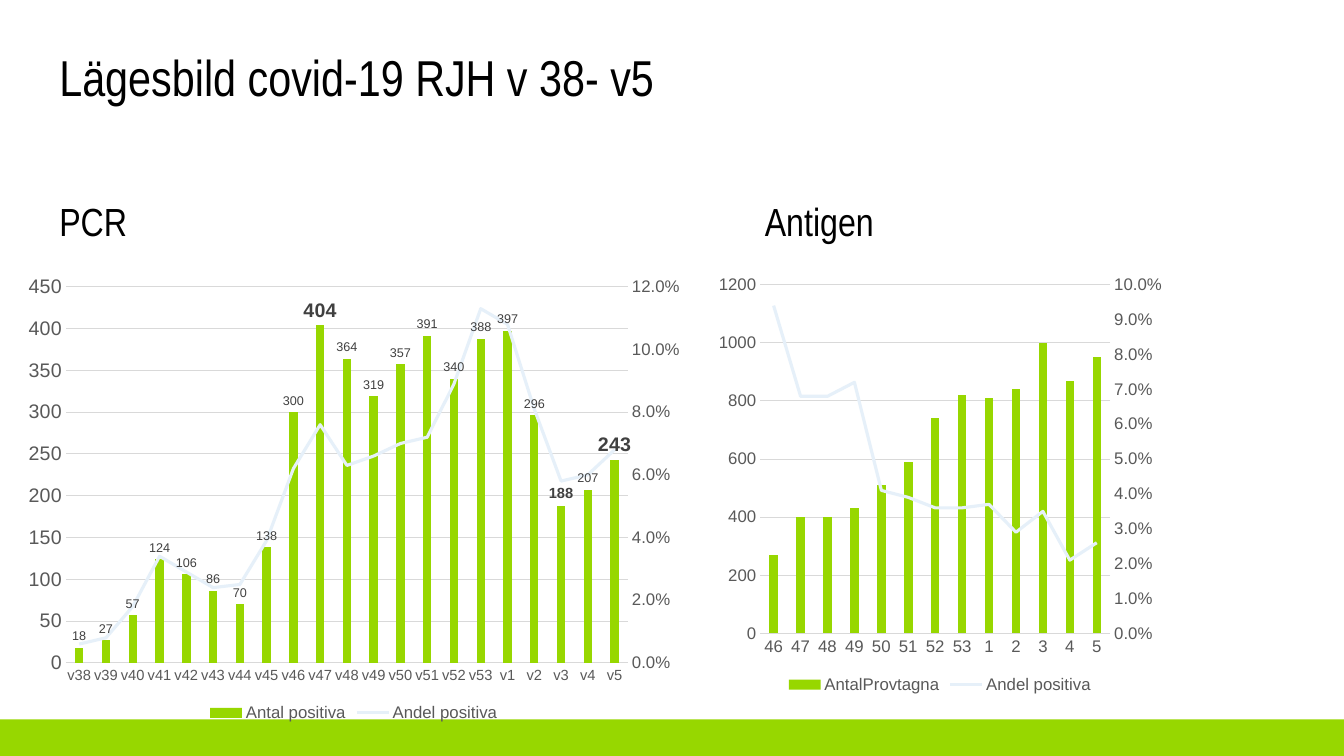
from pptx import Presentation
from pptx.chart.data import CategoryChartData
from pptx.dml.color import RGBColor
from pptx.enum import chart as ch, shapes, text
from pptx.oxml import parse_xml
from pptx.oxml.ns import nsdecls, qn
from pptx.util import Cm, Pt

TITLE = "Lägesbild covid-19 RJH v 38- v5"
PANELS = [
    {
        "head": "PCR", "head_x": 1.24, "box": (0.38, 6.73, 17.07, 11.56),
        "plot": (0.075, 0.043, 0.83, 0.82),
        "weeks": [f"v{n}" for n in [*range(38, 54), *range(1, 6)]],
        "bars": ("Antal positiva",
                 [18, 27, 57, 124, 106, 86, 70, 138, 300, 404, 364,
                  319, 357, 391, 340, 388, 397, 296, 188, 207, 243]),
        "share": [0.006, 0.008, 0.018, 0.034, 0.029, 0.024, 0.025,
                  0.039, 0.062, 0.076, 0.063, 0.066, 0.07, 0.072,
                  0.089, 0.113, 0.108, 0.081, 0.058, 0.06, 0.068],
        "left": (450, 50), "right": (0.12, 0.02),
        "sizes": (10.5, 14), "labels": True,
        "strong": {9: 14, 18: 10.5, 20: 14},
    },
    {
        "head": "Antigen", "head_x": 19.02, "box": (17.88, 6.73, 11.61, 10.85),
        "plot": (0.11, 0.041, 0.76, 0.81),
        "weeks": [str(n) for n in [*range(46, 54), *range(1, 6)]],
        "bars": ("AntalProvtagna",
                 [270, 400, 400, 430, 510, 590, 740, 820, 810, 840,
                  1000, 870, 950]),
        "share": [0.094, 0.068, 0.068, 0.072, 0.041, 0.039, 0.036,
                  0.036, 0.037, 0.029, 0.035, 0.021, 0.026],
        "left": (1200, 200), "right": (0.1, 0.01),
        "sizes": (12, 12), "labels": False, "strong": {},
    },
]
SHARE = "Andel positiva"
THEME = {
    "green": "97D700", "pale": "E6F0F9", "grid": "D9D9D9",
    "axis": "595959", "label": "404040", "black": "000000",
    "font": "Arial", "narrow": "Arial Narrow",
    "title": 36, "head": 28, "text": 12, "value": 9,
}


def rgb(key):
    return RGBColor.from_string(THEME[key])


def style(font, size, key="axis", face="font", bold=False):
    font.name, font.size, font.bold = THEME[face], Pt(size), bold
    font.color.rgb = rgb(key)


def write(holder, words, box, size):
    holder.left, holder.top, holder.width, holder.height = map(Cm, box)
    frame = holder.text_frame
    frame.text = words
    frame.auto_size = text.MSO_AUTO_SIZE.NONE
    frame.vertical_anchor = text.MSO_ANCHOR.TOP
    para = frame.paragraphs[0]
    para.alignment = text.PP_ALIGN.LEFT
    para.line_spacing, para.space_before = 0.9, Pt(0)
    style(para.runs[0].font, size, "black", "narrow")


def split(chart, top, step):
    """Move the second series to a line plot with its own right axis."""
    area = chart.plots[0]._element.getparent()
    bars = chart.plots[0]._element
    line = parse_xml(
        f'<c:lineChart {nsdecls("c")}><c:grouping val="standard"/>'
        '<c:varyColors val="0"/><c:marker val="1"/>'
        '<c:axId val="501"/><c:axId val="502"/></c:lineChart>')
    share = bars.findall(qn("c:ser"))[1]
    invert = share.find(qn("c:invertIfNegative"))
    if invert is not None:
        share.remove(invert)
    line.insert(2, share)
    bars.addnext(line)
    scale = '<c:scaling><c:orientation val="minMax"/>{}</c:scaling>'
    ticks = ('<c:majorTickMark val="none"/><c:minorTickMark val="none"/>'
             '<c:tickLblPos val="nextTo"/>')
    size = int(THEME["text"] * 100)
    look = (f'<c:spPr><a:ln><a:noFill/></a:ln></c:spPr><c:txPr><a:bodyPr/>'
            f'<a:p><a:pPr><a:defRPr sz="{size}"><a:solidFill>'
            f'<a:srgbClr val="{THEME["axis"]}"/></a:solidFill>'
            f'<a:latin typeface="{THEME["font"]}"/></a:defRPr></a:pPr>'
            '<a:endParaRPr/></a:p></c:txPr>')
    limits = f'<c:max val="{top}"/><c:min val="0"/>'
    last = area.findall(qn("c:valAx"))[-1]
    right = parse_xml(
        f'<c:valAx {nsdecls("c", "a")}><c:axId val="502"/>'
        f'{scale.format(limits)}<c:delete val="0"/><c:axPos val="r"/>'
        f'<c:numFmt formatCode="0.0%" sourceLinked="0"/>{ticks}{look}'
        '<c:crossAx val="501"/><c:crosses val="max"/>'
        f'<c:crossBetween val="between"/><c:majorUnit val="{step}"/></c:valAx>')
    below = parse_xml(
        f'<c:catAx {nsdecls("c")}><c:axId val="501"/>{scale.format("")}'
        f'<c:delete val="1"/><c:axPos val="b"/>{ticks}'
        '<c:crossAx val="502"/><c:crosses val="autoZero"/></c:catAx>')
    last.addnext(right)
    right.addnext(below)


def place(chart, frame):
    """Fix the inner plot area, given as fractions of the chart."""
    area = chart.plots[0]._element.getparent()
    for old in area.findall(qn("c:layout")):
        area.remove(old)
    parts = "".join(f'<c:{k} val="{v}"/>' for k, v in zip("xywh", frame))
    area.insert(0, parse_xml(
        f'<c:layout {nsdecls("c")}><c:manualLayout>'
        '<c:layoutTarget val="inner"/><c:xMode val="edge"/>'
        f'<c:yMode val="edge"/>{parts}</c:manualLayout></c:layout>'))


def mark(bars, strong):
    """Show values above the bars, with some weeks in bold."""
    tags = bars.data_labels
    tags.show_value = True
    tags.position = ch.XL_LABEL_POSITION.OUTSIDE_END
    style(tags.font, THEME["value"], "label")
    for week, size in strong.items():
        tag = bars.points[week].data_label
        style(tag.font, size, "label", bold=True)
        tag.position = ch.XL_LABEL_POSITION.OUTSIDE_END


def draw(slide, panel):
    data = CategoryChartData()
    data.categories = panel["weeks"]
    data.add_series(*panel["bars"], number_format="0")
    data.add_series(SHARE, panel["share"], number_format="0.0%")
    chart = slide.shapes.add_chart(
        ch.XL_CHART_TYPE.COLUMN_CLUSTERED, *map(Cm, panel["box"]), data).chart
    style(chart.font, THEME["text"], "black")
    chart.has_title = False
    chart.has_legend = True
    chart.legend.position = ch.XL_LEGEND_POSITION.BOTTOM
    chart.legend.include_in_layout = False
    style(chart.legend.font, THEME["text"])

    cats, vals = chart.category_axis, chart.value_axis
    for axis, size in zip((cats, vals), panel["sizes"]):
        axis.major_tick_mark = axis.minor_tick_mark = ch.XL_TICK_MARK.NONE
        style(axis.tick_labels.font, size)
    vals.minimum_scale = 0
    vals.maximum_scale, vals.major_unit = panel["left"]
    vals.format.line.fill.background()
    for rule in (cats.format.line, vals.major_gridlines.format.line):
        rule.color.rgb, rule.width = rgb("grid"), Pt(0.75)

    split(chart, *panel["right"])
    place(chart, panel["plot"])
    plot, trend = chart.plots
    plot.vary_by_categories = False
    plot.gap_width, plot.overlap = 219, -27
    bars, share = plot.series[0], trend.series[0]
    bars.format.fill.solid()
    bars.format.fill.fore_color.rgb = rgb("green")
    share.format.line.color.rgb = rgb("pale")
    share.format.line.width = Pt(2.25)
    share.marker.style = ch.XL_MARKER_STYLE.NONE
    share.smooth = False
    if panel["labels"]:
        mark(bars, panel["strong"])


def main():
    deck = Presentation()
    deck.slide_width, deck.slide_height = Cm(33.87), Cm(19.05)
    slide = deck.slides.add_slide(deck.slide_layouts[4])
    title, *rest = slide.placeholders
    heads, spare = rest[::2], rest[1::2]
    for holder in spare:
        holder.element.getparent().remove(holder.element)

    band = slide.shapes.add_shape(
        shapes.MSO_SHAPE.RECTANGLE, 0, Cm(18.13), deck.slide_width, Cm(0.92))
    band.shadow.inherit = False
    band.fill.solid()
    band.fill.fore_color.rgb = rgb("green")
    band.line.fill.background()

    write(title, TITLE, (1.24, 1.22, 29.06, 1.8), THEME["title"])
    for head, panel in zip(heads, PANELS):
        write(head, panel["head"], (panel["head_x"], 4.98, 8, 1.5), THEME["head"])
        draw(slide, panel)
    deck.save("out.pptx")


if __name__ == "__main__":
    main()
